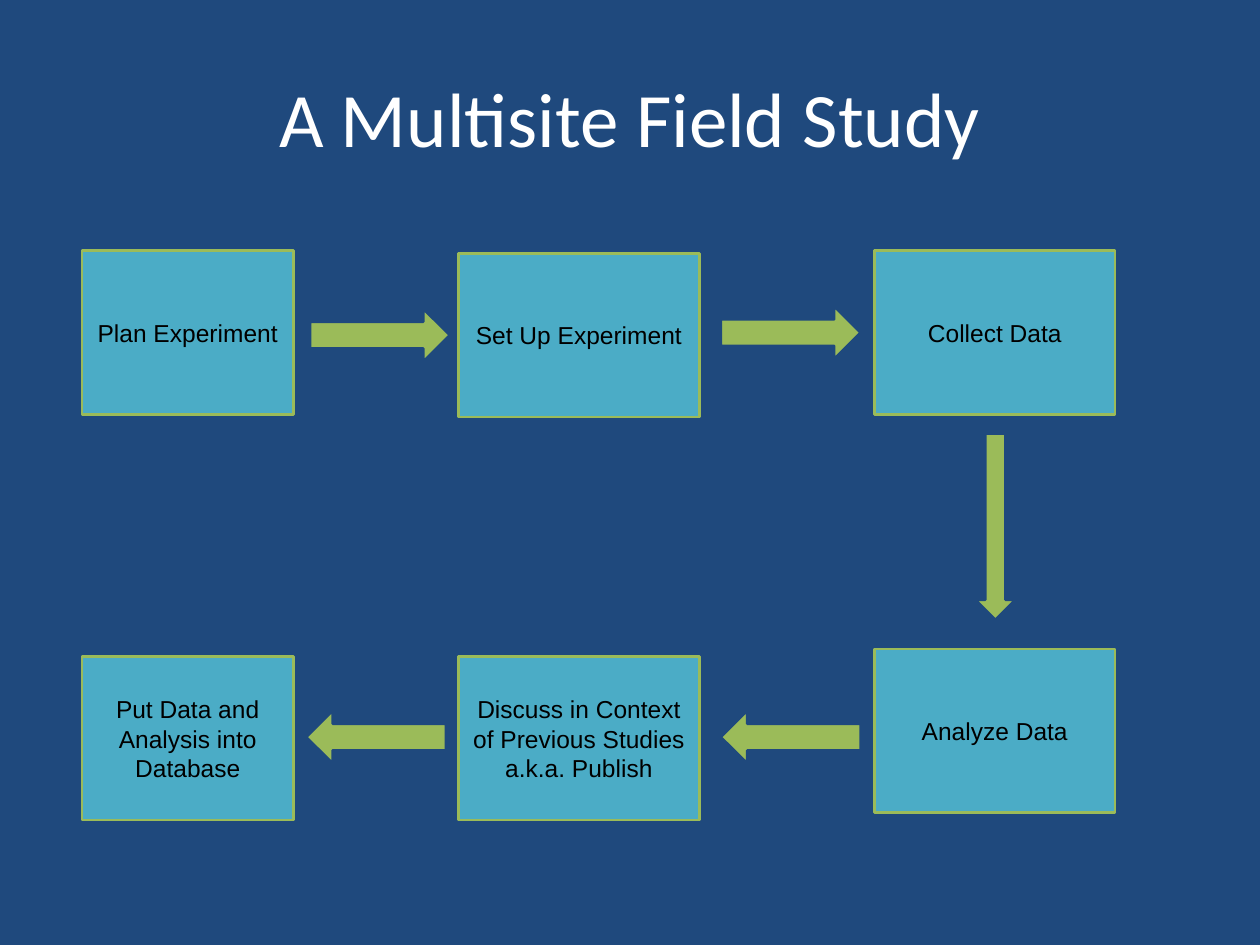
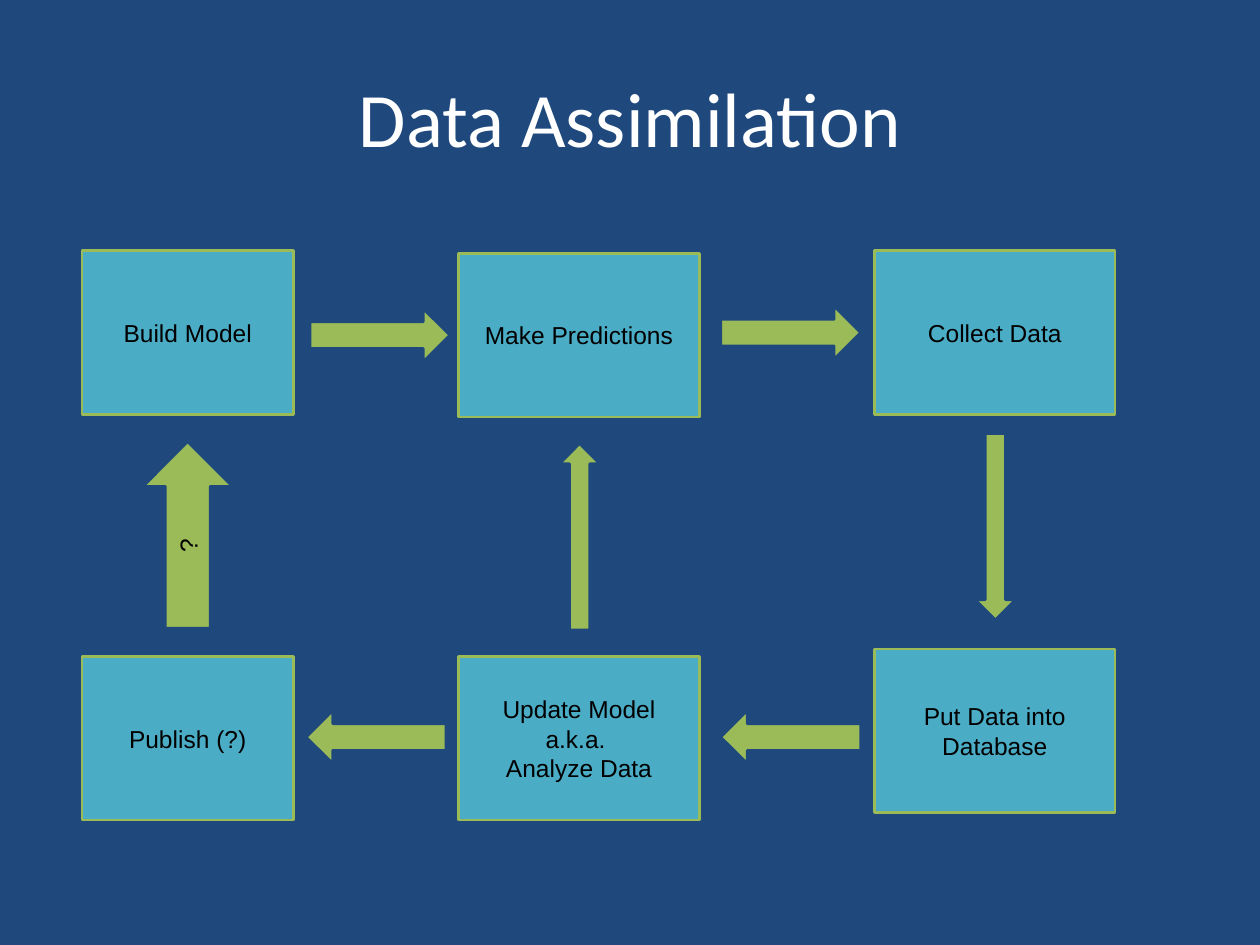
from dataclasses import dataclass

from pptx import Presentation
from pptx.dml.color import RGBColor as Rgb
from pptx.enum.shapes import MSO_SHAPE as Shape
from pptx.enum.text import MSO_ANCHOR as Anchor, MSO_AUTO_SIZE as AutoSize, PP_ALIGN as Align
from pptx.util import Inches, Pt


@dataclass(frozen=True)
class Theme:
    navy: Rgb = Rgb(0x1F, 0x49, 0x7D)
    teal: Rgb = Rgb(0x4B, 0xAC, 0xC6)
    green: Rgb = Rgb(0x9B, 0xBB, 0x59)
    white: Rgb = Rgb(0xFF, 0xFF, 0xFF)
    black: Rgb = Rgb(0, 0, 0)
    title_font: str = "Calibri"
    body_font: str = "Arial"
    title_size: int = 44
    body_size: int = 14
    line_width: float = 1.5
    inset: float = 0.1


THEME = Theme()

# Box grid: columns as (left, width), tops by row
COLUMNS = [(0.65, 1.68), (3.64, 1.91), (6.94, 1.91)]
ROW_TOPS = [[1.99, 2.01, 1.99], [5.21, 5.21, 5.15]]
BOX_HEIGHT = 1.3

# Arrows: sizes are (length, thickness); rotations are in degrees
SIDE_ARROW = (1.11, 0.42)
TALL_ARROW = (1.48, 0.32)
WIDE_ARROW = (1.48, 0.71)
RIGHT, DOWN, LEFT, UP = 0, 90, 180, 270

# Each arrow is (left, top, size, rotation, label)
CYCLE_ARROWS = [
    (2.46, 2.45, SIDE_ARROW, RIGHT, ""),
    (5.72, 2.43, SIDE_ARROW, RIGHT, ""),
    (7.16, 4.02, TALL_ARROW, DOWN, ""),
    (5.72, 5.64, SIDE_ARROW, LEFT, ""),
    (2.43, 5.64, SIDE_ARROW, LEFT, ""),
]
FEEDBACK_ARROWS = [
    (3.86, 4.1, TALL_ARROW, UP, ""),
    (0.75, 3.89, WIDE_ARROW, UP, "?"),
]

# Box texts by row, left to right
STUDY_STEPS = [
    ["Plan Experiment", "Set Up Experiment", "Collect Data"],
    ["Put Data and Analysis into Database",
     "Discuss in Context of Previous Studies\na.k.a. Publish",
     "Analyze Data"],
]
ASSIMILATION_STEPS = [
    ["Build Model", "Make Predictions", "Collect Data"],
    ["Publish (?)", "Update Model\na.k.a. \nAnalyze Data", "Put Data into Database"],
]


def write_text(shape, text, font_name, size, color):
    """Write centred lines, one paragraph each."""
    frame = shape.text_frame
    frame.word_wrap = True
    frame.auto_size = AutoSize.NONE
    frame.vertical_anchor = Anchor.MIDDLE
    frame.margin_left = frame.margin_right = Inches(THEME.inset)
    frame.margin_top = frame.margin_bottom = Inches(THEME.inset)
    for index, line in enumerate(text.split("\n")):
        paragraph = frame.add_paragraph() if index else frame.paragraphs[0]
        paragraph.alignment = Align.CENTER
        run = paragraph.add_run()
        run.text = line
        run.font.name = font_name
        run.font.size = Pt(size)
        run.font.color.rgb = color


def add_block(slide, kind, left, top, width, height, fill, outline, text):
    shape = slide.shapes.add_shape(
        kind, Inches(left), Inches(top), Inches(width), Inches(height))
    shape.shadow.inherit = False
    shape.fill.solid()
    shape.fill.fore_color.rgb = fill
    shape.line.color.rgb = outline
    shape.line.width = Pt(THEME.line_width)
    if text:
        write_text(shape, text, THEME.body_font, THEME.body_size, THEME.black)
    return shape


def add_steps(slide, steps):
    for tops, texts in zip(ROW_TOPS, steps):
        for (left, width), top, text in zip(COLUMNS, tops, texts):
            add_block(slide, Shape.RECTANGLE, left, top, width, BOX_HEIGHT,
                      THEME.teal, THEME.green, text)


def add_arrows(slide, arrows):
    for left, top, (length, thickness), rotation, label in arrows:
        arrow = add_block(slide, Shape.RIGHT_ARROW, left, top, length, thickness,
                          THEME.green, THEME.navy, label)
        arrow.rotation = rotation


def add_title(slide, text):
    title = slide.shapes.title
    title.left, title.top = Inches(0.5), Inches(0.3)
    title.width, title.height = Inches(9), Inches(1.25)
    write_text(title, text, THEME.title_font, THEME.title_size, THEME.white)


def add_cycle_slide(presentation, title, steps, arrows):
    slide = presentation.slides.add_slide(presentation.slide_layouts[5])
    add_title(slide, title)
    add_steps(slide, steps)
    add_arrows(slide, arrows)


def main():
    presentation = Presentation()
    presentation.slide_width = Inches(10)
    presentation.slide_height = Inches(7.5)

    # Shared background
    background = presentation.slide_master.background.fill
    background.solid()
    background.fore_color.rgb = THEME.navy

    add_cycle_slide(presentation, "A Multisite Field Study", STUDY_STEPS, CYCLE_ARROWS)
    add_cycle_slide(presentation, "Data Assimilation", ASSIMILATION_STEPS,
                    CYCLE_ARROWS + FEEDBACK_ARROWS)
    presentation.save("out.pptx")


if __name__ == "__main__":
    main()
